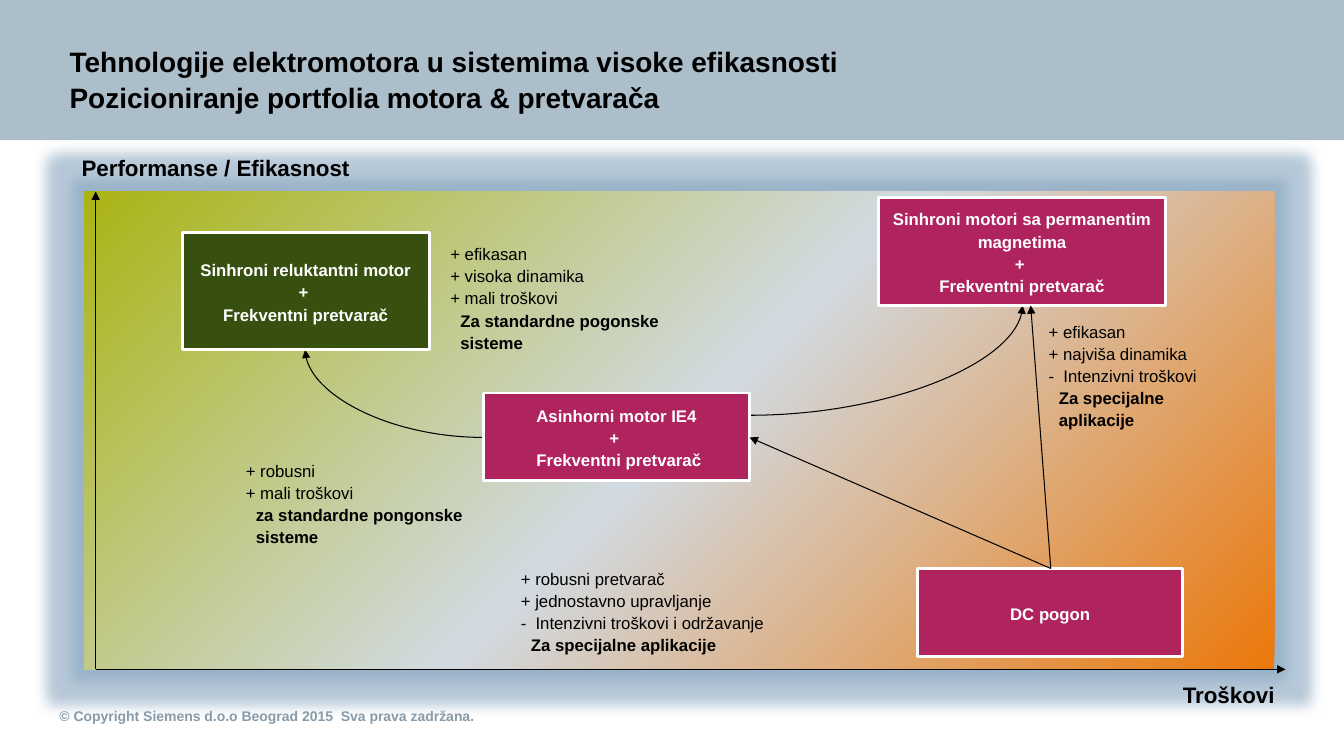
import pptx
import pptx.util
import pptx.dml.color
import pptx.enum.shapes
import pptx.enum.text
import pptx.oxml
import copy
from pptx.util import Inches, Pt
from pptx.oxml.ns import qn

ANCHOR = pptx.enum.text.MSO_ANCHOR
ALIGN = pptx.enum.text.PP_ALIGN
CONNECTOR = pptx.enum.shapes.MSO_CONNECTOR
RECTANGLE = pptx.enum.shapes.MSO_SHAPE.RECTANGLE
DRAWING_NS = 'xmlns:a="http://schemas.openxmlformats.org/drawingml/2006/main"'

BLACK, WHITE = "000000", "FFFFFF"
HEADER, COPYRIGHT = "ADBECB", "879BAA"
MAGENTA, GREEN = "AF235F", "37500F"


def rgb(value):
    return pptx.dml.color.RGBColor.from_string(value)


class MotorSlide:
    font_name = "Arial"

    def __init__(self, presentation):
        self.slide = presentation.slides.add_slide(presentation.slide_layouts[5])
        self.shapes = self.slide.shapes

    def style(self, paragraph, size, color=BLACK, bold=True, spacing=1.1):
        paragraph.line_spacing = spacing
        font = paragraph.font
        font.name, font.size, font.bold = self.font_name, Pt(size), bold
        font.color.rgb = rgb(color)

    def frame(self, shape, insets=(0, 0, 0, 0), anchor=ANCHOR.TOP, wrap=True):
        frame = shape.text_frame
        frame.word_wrap = wrap
        frame.auto_size = pptx.enum.text.MSO_AUTO_SIZE.NONE
        frame.vertical_anchor = anchor
        (frame.margin_left, frame.margin_top,
         frame.margin_right, frame.margin_bottom) = map(Inches, insets)
        return frame

    def title(self, text, width, height):
        title = self.shapes.title
        title.left, title.top = Inches(0), Inches(0)
        title.width, title.height = Inches(width), Inches(height)
        title.fill.solid()
        title.fill.fore_color.rgb = rgb(HEADER)
        frame = self.frame(title, (0.69, 0.43, 2.32, 0.26), ANCHOR.BOTTOM)
        heading = frame.paragraphs[0]
        heading.text = text
        heading.alignment = ALIGN.LEFT
        self.style(heading, 20, spacing=1.06)

    def label(self, text, box, size=16, color=BLACK, wrap=False, **frame_options):
        textbox = self.shapes.add_textbox(*map(Inches, box))
        paragraph = self.frame(textbox, wrap=wrap, **frame_options).paragraphs[0]
        paragraph.text = text
        self.style(paragraph, size, color)

    def gradient_field(self, box, colors, angle, glow):
        field = self.shapes.add_shape(RECTANGLE, *map(Inches, box))
        field.line.fill.background()
        field.fill.gradient()
        stop_list = field._element.spPr.find(".//" + qn("a:gsLst"))
        stop_list.insert(1, copy.deepcopy(stop_list[0]))
        for index, (stop, color) in enumerate(zip(field.fill.gradient_stops, colors)):
            stop.position = index / (len(colors) - 1)
            stop.color.rgb = rgb(color)
        field.fill.gradient_angle = angle
        field._element.spPr.append(pptx.oxml.parse_xml(
            f'<a:effectLst {DRAWING_NS}><a:glow rad="{Inches(0.25)}">'
            f'<a:srgbClr val="{glow}"><a:alpha val="60000"/></a:srgbClr>'
            '</a:glow></a:effectLst>'))

    def drive(self, text, box, fill=MAGENTA):
        drive = self.shapes.add_shape(RECTANGLE, *map(Inches, box))
        drive.shadow.inherit = False
        drive.fill.solid()
        drive.fill.fore_color.rgb = rgb(fill)
        drive.line.color.rgb = rgb(WHITE)
        drive.line.width = Pt(2)
        frame = self.frame(drive, (0.12, 0.06, 0.12, 0.06), ANCHOR.MIDDLE)
        paragraph = frame.paragraphs[0]
        paragraph.text = text
        paragraph.alignment = ALIGN.CENTER
        self.style(paragraph, 12, WHITE)

    def traits(self, points, use, box):
        """Pros and cons with a hanging sign, then the use in bold."""
        frame = self.frame(self.shapes.add_textbox(*map(Inches, box)))
        for index, text in enumerate([*points, use]):
            paragraph = frame.paragraphs[0] if index == 0 else frame.add_paragraph()
            paragraph.text = text
            is_use = index == len(points)
            properties = paragraph._p.get_or_add_pPr()
            properties.set("marL", str(Inches(0.1)))
            properties.set("indent", str(0 if is_use else Inches(-0.1)))
            self.style(paragraph, 12, bold=is_use)

    def arrow(self, start, end, width=0.75, curved=False):
        kind = CONNECTOR.CURVE if curved else CONNECTOR.STRAIGHT
        arrow = self.shapes.add_connector(kind, *map(Inches, (*start, *end)))
        arrow.line.color.rgb = rgb(BLACK)
        arrow.line.width = Pt(width)
        properties = arrow._element.spPr
        if curved:
            properties.find(qn("a:prstGeom")).set("prst", "curvedConnector2")
        arrow.line._get_or_add_ln().append(
            pptx.oxml.parse_xml(f'<a:tailEnd {DRAWING_NS} type="triangle"/>'))
        properties.append(pptx.oxml.parse_xml(f'<a:effectLst {DRAWING_NS}/>'))


def main():
    presentation = pptx.Presentation()
    presentation.slide_width, presentation.slide_height = Inches(13.34), Inches(7.5)
    chart = MotorSlide(presentation)

    # Header and footer
    chart.title("Tehnologije elektromotora u sistemima visoke efikasnosti\n"
                "Pozicioniranje portfolia motora & pretvarača", 13.34, 1.39)
    chart.label("© Copyright Siemens d.o.o Beograd 2015  Sva prava zadržana.",
                (0, 6.78, 10, 0.47), 10, COPYRIGHT, wrap=True,
                insets=(0.59, 0.16, 2.32, 0), anchor=ANCHOR.MIDDLE)

    # Field, transitions from the asynchronous motor, axes
    chart.gradient_field((0.84, 1.9, 11.81, 4.74),
                         ("EB780A", "D2DAE1", "AAB414"), 135, "87A5BE")
    chart.arrow((7.44, 4.12), (10.15, 3.03), curved=True)
    chart.arrow((4.8, 4.34), (3.03, 3.47), curved=True)
    origin = (0.95, 6.64)
    for axis_end in ((0.95, 1.9), (12.76, 6.64)):
        chart.arrow(origin, axis_end, width=1)
    chart.label("Troškovi", (11.74, 6.73, 0.92, 0.27))
    chart.label("Performanse / Efikasnost", (0.81, 1.5, 2.69, 0.3))

    # Drive systems
    chart.drive("DC pogon", (9.11, 5.64, 2.63, 0.87))
    chart.drive("Asinhorni motor IE4\n+ \n Frekventni pretvarač",
                (4.8, 3.9, 2.64, 0.87))
    chart.drive("Sinhroni motori sa permanentim magnetima\n+ \nFrekventni pretvarač",
                (8.72, 1.96, 2.85, 1.07))
    chart.drive("Sinhroni reluktantni motor\n+ \nFrekventni pretvarač",
                (1.81, 2.31, 2.45, 1.16), GREEN)

    # Pros, cons and use of each system
    chart.traits(("+ efikasan", "+ najviša dinamika", "-\t Intenzivni troškovi"),
                 "Za specijalne aplikacije", (10.41, 3.17, 1.86, 1.11))
    chart.traits(("+ efikasan", "+ visoka dinamika", "+ mali troškovi"),
                 "Za standardne pogonske sisteme", (4.47, 2.4, 2.66, 1.11))
    chart.traits(("+ robusni", "+ mali troškovi"),
                 "za standardne pongonske sisteme", (2.44, 4.55, 2.77, 0.89))
    chart.traits(("+ robusni pretvarač", "+ jednostavno upravljanje",
                  "-\t Intenzivni troškovi i održavanje"),
                 "Za specijalne aplikacije", (5.17, 5.62, 2.6, 0.89))

    # Transitions from the DC drive
    for target in ((10.23, 3.03), (7.44, 4.34)):
        chart.arrow((10.43, 5.64), target)

    presentation.save("out.pptx")


if __name__ == "__main__":
    main()
